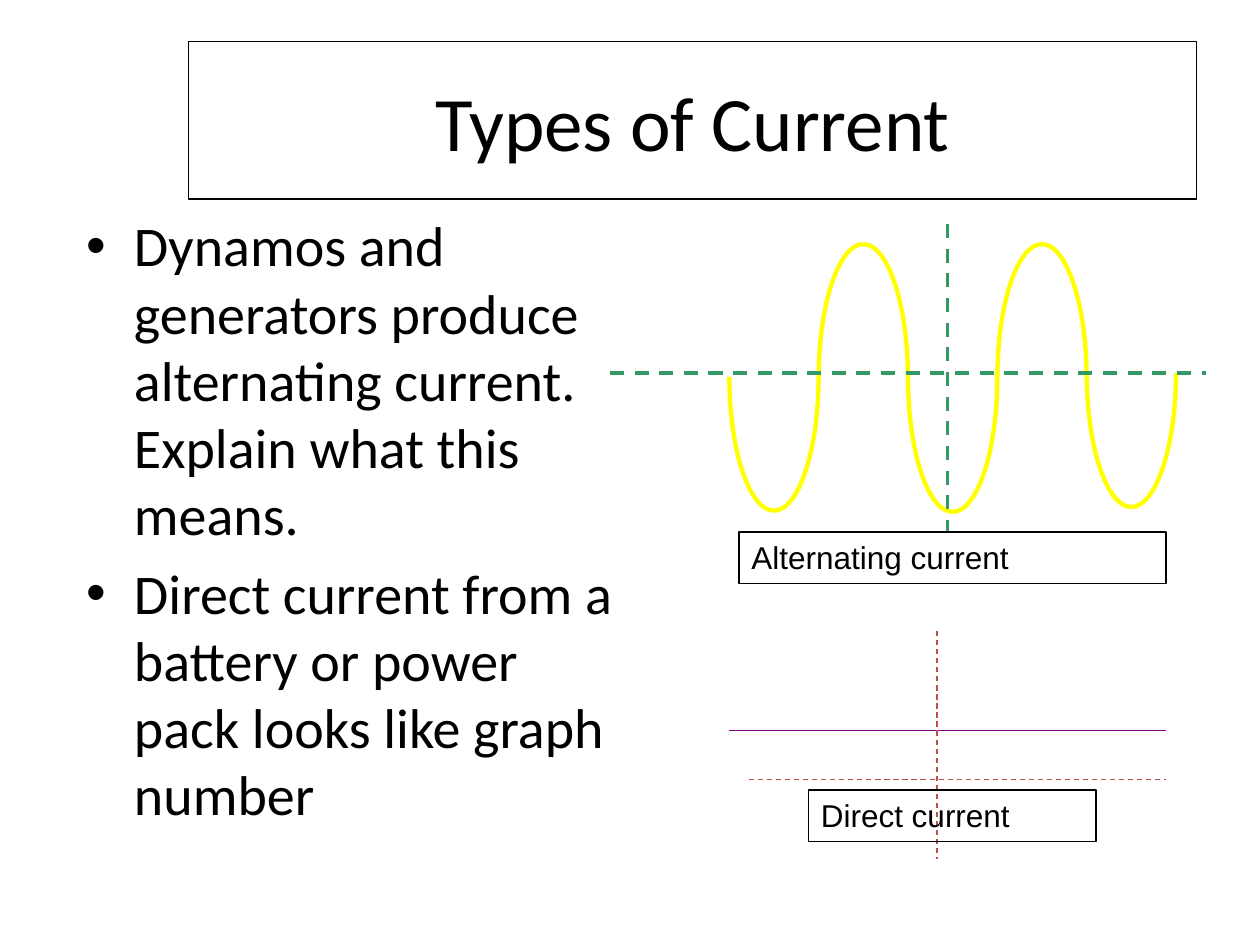
from lxml import etree
from pptx import Presentation
from pptx.dml.color import RGBColor
from pptx.enum.dml import MSO_LINE
from pptx.enum.shapes import MSO_CONNECTOR, MSO_SHAPE
from pptx.enum.text import MSO_ANCHOR, PP_ALIGN
from pptx.oxml.ns import qn
from pptx.util import Pt


def rgb(hex_string):
    return RGBColor.from_string(hex_string)


def add_run(p, text, font, size):
    r = p.add_run()
    r.text = text
    r.font.name, r.font.size = font, Pt(size)
    r.font.color.rgb = rgb("000000")


prs = Presentation()
prs.slide_width, prs.slide_height = Pt(720), Pt(540)
s = prs.slides.add_slide(prs.slide_layouts[5])

# Title
title = s.shapes.title
title.left, title.top, title.width, title.height = Pt(107.9), Pt(23.75), Pt(576), Pt(90)
title.line.color.rgb = rgb("000000")
title.line.width = Pt(0.75)
tf = title.text_frame
tf.vertical_anchor = MSO_ANCHOR.MIDDLE
p = tf.paragraphs[0]
p.alignment = PP_ALIGN.CENTER
add_run(p, "Types of Current", "Calibri", 44)

# Bulleted questions
tf = s.shapes.add_textbox(Pt(42.5), Pt(117), Pt(318), Pt(356.5)).text_frame
tf.word_wrap = True
questions = [
    "Dynamos and generators produce alternating current. Explain what this means.",
    "Direct current from a battery or power pack looks like graph number",
]
for i, text in enumerate(questions):
    p = tf.add_paragraph() if i else tf.paragraphs[0]
    p.space_before = Pt(6.4)
    pPr = p._p.get_or_add_pPr()
    pPr.set("marL", str(Pt(27)))
    pPr.set("indent", str(-Pt(27)))
    etree.SubElement(pPr, qn("a:buFont")).set("typeface", "Arial")
    etree.SubElement(pPr, qn("a:buChar")).set("char", "•")
    add_run(p, text, "Calibri", 32)

# Alternating wave: two quarter ellipses for each half wave
RX, RY, BEND = 25.5, 76.5, 0.55
wave = s.shapes.add_group_shape()
baselines = [215.3, 216, 216, 216, 213.2]
for i, base in enumerate(baselines):
    center = 442.3 + i * 51.05
    peak = base + (-RY if i % 2 else RY)
    for side in (1, -1):
        builder = wave.shapes.build_freeform(Pt(center), Pt(peak))
        builder.add_line_segments([(Pt(center + side * RX), Pt(base))], close=False)
        sp = builder.convert_to_shape()
        sp.shadow.inherit = False
        sp.fill.background()
        sp.line.color.rgb = rgb("FFFF00")
        sp.line.width = Pt(2.5)
        # Bend the straight segment into a quarter ellipse
        segment = next(sp._element.iter(qn("a:lnTo")))
        (x0, y0), (x1, y1) = [(int(pt.get("x")), int(pt.get("y")))
                              for pt in sp._element.iter(qn("a:pt"))]
        curve = etree.SubElement(segment.getparent(), qn("a:cubicBezTo"))
        controls = [(x0 + BEND * (x1 - x0), y0), (x1, y1 + BEND * (y0 - y1)), (x1, y1)]
        for x, y in controls:
            etree.SubElement(curve, qn("a:pt"), x=str(round(x)), y=str(round(y)))
        segment.getparent().remove(segment)

# Axes and the direct current line: x1, y1, x2, y2, colour, width, dashed
lines = [
    (348.5, 213.2, 689, 213.2, "339966", 2, True),
    (541.5, 128, 541.5, 307.5, "339966", 2, True),
    (416.8, 417.4, 666, 417.4, "800080", 0.75, False),
    (535.5, 360.7, 535.5, 491, "C0504D", 0.75, True),
    (428, 445.5, 666, 445.5, "C0504D", 0.75, True),
]
for *ends, color, width, dashed in lines:
    line = s.shapes.add_connector(MSO_CONNECTOR.STRAIGHT, *map(Pt, ends))
    line.line.color.rgb = rgb(color)
    line.line.width = Pt(width)
    if dashed:
        line.line.dash_style = MSO_LINE.DASH
    etree.SubElement(line._element.spPr, qn("a:effectLst"))

# Graph labels
labels = [
    ("Alternating current", 422.3, 304, 244, "FFFFFF"),
    ("Direct current", 462, 451.5, 164.3, None),
]
for text, left, top, width, fill in labels:
    sp = s.shapes.add_shape(MSO_SHAPE.RECTANGLE, Pt(left), Pt(top), Pt(width), Pt(29.5))
    sp.shadow.inherit = False
    if fill:
        sp.fill.solid()
        sp.fill.fore_color.rgb = rgb(fill)
    else:
        sp.fill.background()
    sp.line.color.rgb = rgb("000000")
    sp.line.width = Pt(0.75)
    tf = sp.text_frame
    tf.word_wrap = True
    tf.vertical_anchor = MSO_ANCHOR.TOP
    p = tf.paragraphs[0]
    p.alignment = PP_ALIGN.LEFT
    add_run(p, text, "Arial", 18)

prs.save("out.pptx")
